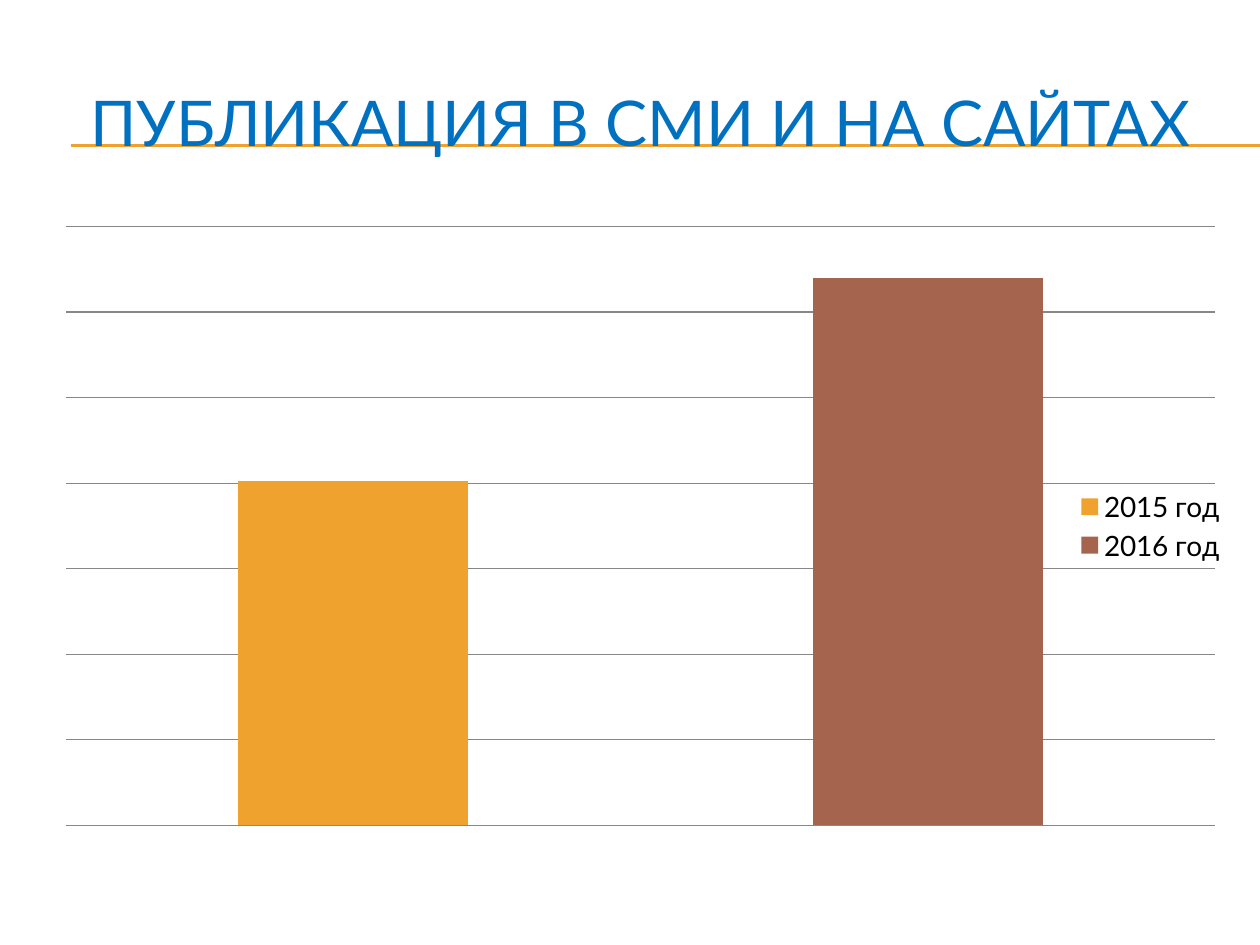
from typing import NamedTuple

from lxml.etree import SubElement
from pptx import Presentation
from pptx.chart.data import CategoryChartData
from pptx.dml.color import RGBColor
from pptx.enum.chart import XL_CHART_TYPE as ChartType, XL_LEGEND_POSITION as LegendPosition
from pptx.enum.shapes import MSO_CONNECTOR as Connector
from pptx.enum.text import MSO_ANCHOR as Anchor, PP_ALIGN as Align
from pptx.oxml.ns import qn
from pptx.util import Pt

EMU_PER_PX = 914400 / 126
FONT = "Lato"
COLORS = {
    "title": "0070C0",
    "rule": "F0A22E",
    "2015 год": "F0A22E",
    "2016 год": "A5644E",
    "grid": "878787",
    "text": "000000",
}
PUBLICATIONS = {"2015 год": 63, "2016 год": 100}
GRID_STEP = 15.63
GRID_INTERVALS = 7


class Box(NamedTuple):
    left: int
    top: int
    width: int
    height: int


class Rule(NamedTuple):
    left: int
    right: int
    y: int


TITLE_BOX = Box(42, 63, 1197, 116)
CHART_BOX = Box(42, 214, 1197, 624)
PLOT_LAYOUT = {"x": 0.02, "y": 0.02, "w": 0.96, "h": 0.96}
RULES = [Rule(71, 1260, y) for y in (145, 146)]


def px(length: int) -> int:
    return round(length * EMU_PER_PX)


def color(name: str) -> RGBColor:
    return RGBColor.from_string(COLORS[name])


def set_attributes(target, values: dict) -> None:
    for name, value in values.items():
        setattr(target, name, value)


def set_font(font, size: int, color_name: str) -> None:
    set_attributes(font, {"name": FONT, "size": Pt(size), "bold": False})
    font.color.rgb = color(color_name)


def draw_rule(slide, rule: Rule) -> None:
    line = slide.shapes.add_connector(
        Connector.STRAIGHT, px(rule.left), px(rule.y), px(rule.right), px(rule.y))
    line.line.color.rgb = color("rule")
    line.line.width = Pt(0.75)
    SubElement(line._element.spPr, qn("a:effectLst"))


def draw_title(slide, box: Box, text: str) -> None:
    frame = slide.shapes.add_textbox(*map(px, box)).text_frame
    set_attributes(frame, {"word_wrap": True, "vertical_anchor": Anchor.MIDDLE})
    paragraph = frame.paragraphs[0]
    set_attributes(paragraph, {"text": text, "alignment": Align.CENTER})
    set_font(paragraph.runs[0].font, 36, "title")


def fix_plot_area(chart, fractions: dict) -> None:
    plot_area = chart._chartSpace.chart.plotArea
    for old_layout in plot_area.findall(qn("c:layout")):
        plot_area.remove(old_layout)
    layout = SubElement(plot_area, qn("c:layout"))
    plot_area.insert(0, layout)
    manual = SubElement(layout, qn("c:manualLayout"))
    settings = {"layoutTarget": "inner", "xMode": "edge", "yMode": "edge", **fractions}
    for name, value in settings.items():
        SubElement(manual, qn(f"c:{name}")).set("val", str(value))


def draw_chart(slide, box: Box, values: dict[str, int]) -> None:
    data = CategoryChartData()
    data.categories = list(values)
    data.add_series("Series 1", list(values.values()))
    chart = slide.shapes.add_chart(ChartType.COLUMN_CLUSTERED, *map(px, box), data).chart
    set_attributes(chart, {"has_title": False, "has_legend": True})
    set_font(chart.font, 18, "text")
    fix_plot_area(chart, PLOT_LAYOUT)

    # Hidden axes, visible gridlines
    chart.category_axis.visible = False
    set_attributes(chart.value_axis, {
        "visible": False,
        "has_major_gridlines": True,
        "minimum_scale": 0,
        "maximum_scale": GRID_STEP * GRID_INTERVALS,
        "major_unit": GRID_STEP,
    })
    grid_line = chart.value_axis.major_gridlines.format.line
    grid_line.color.rgb = color("grid")
    grid_line.width = Pt(0.75)

    # One colour per year
    plot = chart.plots[0]
    set_attributes(plot, {"gap_width": 150, "vary_by_categories": True})
    for index, year in enumerate(values):
        fill = plot.series[0].points[index].format.fill
        fill.solid()
        fill.fore_color.rgb = color(year)

    # Legend over the plot
    set_attributes(chart.legend, {
        "position": LegendPosition.RIGHT, "include_in_layout": True})
    set_font(chart.legend.font, 16, "text")


def main() -> None:
    presentation = Presentation()
    set_attributes(presentation, {"slide_width": px(1260), "slide_height": px(945)})
    slide = presentation.slides.add_slide(presentation.slide_layouts[6])

    # Heading with its double rule
    for rule in RULES:
        draw_rule(slide, rule)
    draw_title(slide, TITLE_BOX, "ПУБЛИКАЦИЯ В СМИ И НА САЙТАХ")

    # Publications by year
    draw_chart(slide, CHART_BOX, PUBLICATIONS)
    presentation.save("out.pptx")


if __name__ == "__main__":
    main()
